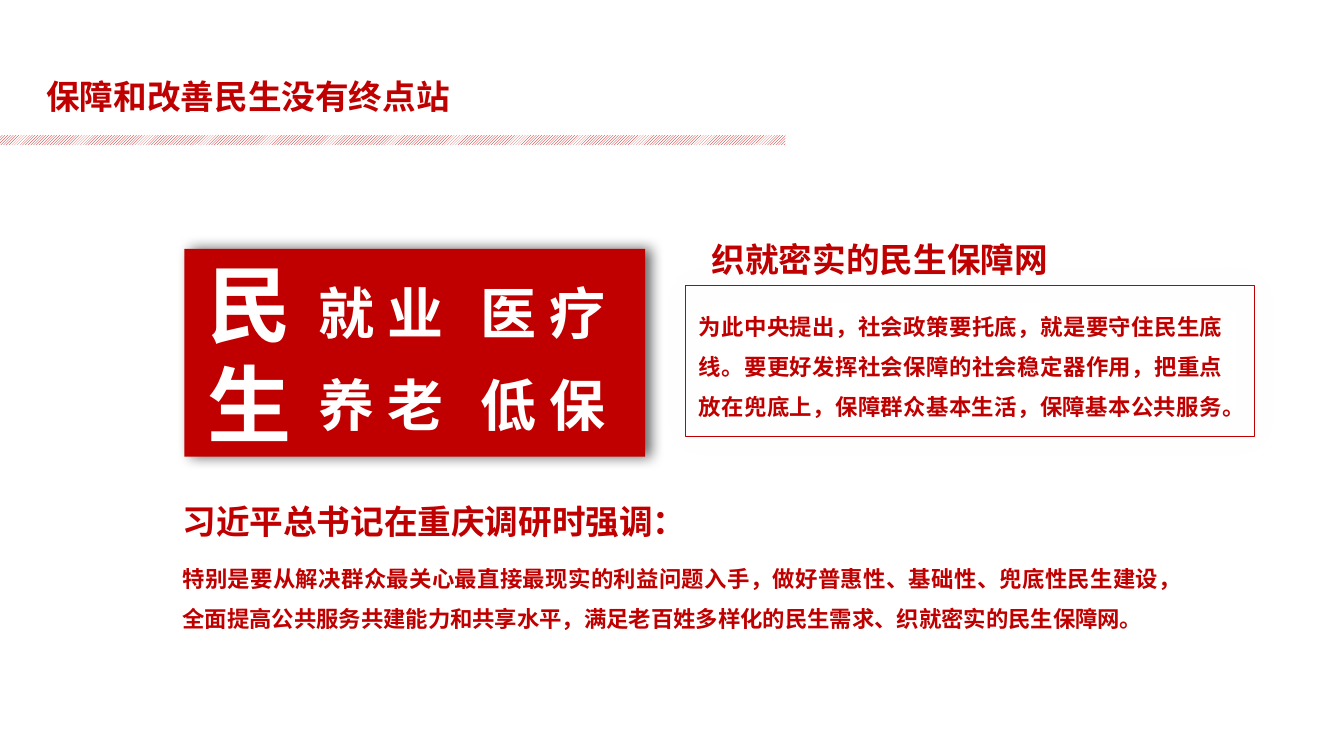
"""Build the slide on safeguarding and improving people's livelihood."""
from lxml.etree import SubElement
from pptx import Presentation
from pptx.dml.color import RGBColor
from pptx.enum.dml import MSO_PATTERN
from pptx.enum.shapes import MSO_SHAPE as SHAPE
from pptx.enum.text import MSO_ANCHOR, MSO_AUTO_SIZE, PP_ALIGN as ALIGN
from pptx.oxml.ns import qn
from pptx.util import Inches, Pt

FONT = "Noto Sans CJK SC"
RED, WHITE, BLACK = "C00000", "FFFFFF", "000000"


def rgb(code):
    return RGBColor.from_string(code)


def write(box, text, size, color, align=ALIGN.LEFT, spacing=1.0):
    frame = box.text_frame
    frame.word_wrap = True
    frame.auto_size = MSO_AUTO_SIZE.NONE
    frame.vertical_anchor = MSO_ANCHOR.TOP
    paragraph = frame.paragraphs[0]
    paragraph.alignment = align
    paragraph.line_spacing = spacing
    paragraph.space_before = Pt(0)
    run = paragraph.add_run()
    run.text = text
    run.font.size = Pt(size)
    run.font.bold = True
    run.font.color.rgb = rgb(color)
    run.font.name = FONT
    SubElement(run.font._element, qn("a:ea"), typeface=FONT)


prs = Presentation()
prs.slide_width = Inches(13.33)
prs.slide_height = Inches(7.5)
slide = prs.slides.add_slide(prs.slide_layouts[5])
shapes = slide.shapes

title = shapes.title
title.left, title.top = Inches(0.36), Inches(0.75)
title.width, title.height = Inches(6.03), Inches(0.84)
write(title, "保障和改善民生没有终点站", 24, RED, spacing=0.9)

stripe = shapes.add_shape(SHAPE.RECTANGLE, Inches(-0.19), Inches(1.34), Inches(7.98), Inches(0.1))
stripe.fill.patterned()
stripe.fill.pattern = MSO_PATTERN.DARK_UPWARD_DIAGONAL
stripe.fill.fore_color.rgb = rgb(RED)
stripe.fill.back_color.rgb = rgb(WHITE)
stripe.line.fill.background()
stripe.shadow.inherit = False

panel = shapes.add_shape(SHAPE.RECTANGLE, Inches(1.83), Inches(2.47), Inches(4.57), Inches(2.06))
panel.fill.solid()
panel.fill.fore_color.rgb = rgb(RED)
panel.line.fill.background()

frame_box = shapes.add_shape(
    SHAPE.ROUNDED_RECTANGLE, Inches(6.8), Inches(2.83), Inches(5.64), Inches(1.5))
frame_box.adjustments[0] = 0
frame_box.fill.background()
frame_box.line.color.rgb = rgb(RED)
frame_box.line.width = Pt(1)

for shape, opacity, blur, distance in [(panel, 60, 10, 4), (frame_box, 11, 22, 0)]:
    shape.shadow.inherit = False
    effects = shape._element.spPr.find(qn("a:effectLst"))
    shadow = SubElement(effects, qn("a:outerShdw"), blurRad=str(Pt(blur)),
                        dist=str(Pt(distance)), dir="0", algn="ctr", rotWithShape="0")
    shade = SubElement(shadow, qn("a:srgbClr"), val=BLACK)
    SubElement(shade, qn("a:alpha"), val=str(opacity * 1000))

texts = [
    ("民生", 1.93, 2.43, 1.45, 2.15, 60, WHITE, ALIGN.LEFT, 1.0),
    ("织就密实的民生保障网", 6.93, 2.1, 6.03, 0.74, 24, RED, ALIGN.JUSTIFY, 1.5),
    ("为此中央提出，社会政策要托底，就是要守住民生底线。要更好发挥社会保障的社会稳定器作用，"
     "把重点放在兜底上，保障群众基本生活，保障基本公共服务。",
     6.8, 2.9, 5.46, 1.3, 16, RED, ALIGN.JUSTIFY, 1.5),
    ("习近平总书记在重庆调研时强调：", 1.68, 4.7, 6.03, 0.74, 24, RED, ALIGN.JUSTIFY, 1.5),
    ("特别是要从解决群众最关心最直接最现实的利益问题入手，做好普惠性、基础性、兜底性民生建设，"
     "全面提高公共服务共建能力和共享水平，满足老百姓多样化的民生需求、织就密实的民生保障网。",
     1.68, 5.4, 10.18, 0.94, 16, RED, ALIGN.JUSTIFY, 1.5),
]
for index, topic in enumerate(["就 业", "医 疗", "养 老", "低 保"]):
    row, column = divmod(index, 2)
    texts.append((topic, 3.03 + column * 1.61, 2.69 + row * 0.92, 1.86, 0.81,
                  40, WHITE, ALIGN.LEFT, 1.0))

for text, left, top, width, height, size, color, align, spacing in texts:
    box = shapes.add_textbox(Inches(left), Inches(top), Inches(width), Inches(height))
    box.text_frame.margin_left = box.text_frame.margin_right = Inches(0.13)
    box.text_frame.margin_top = box.text_frame.margin_bottom = Inches(0.07)
    write(box, text, size, color, align, spacing)

prs.save("out.pptx")
